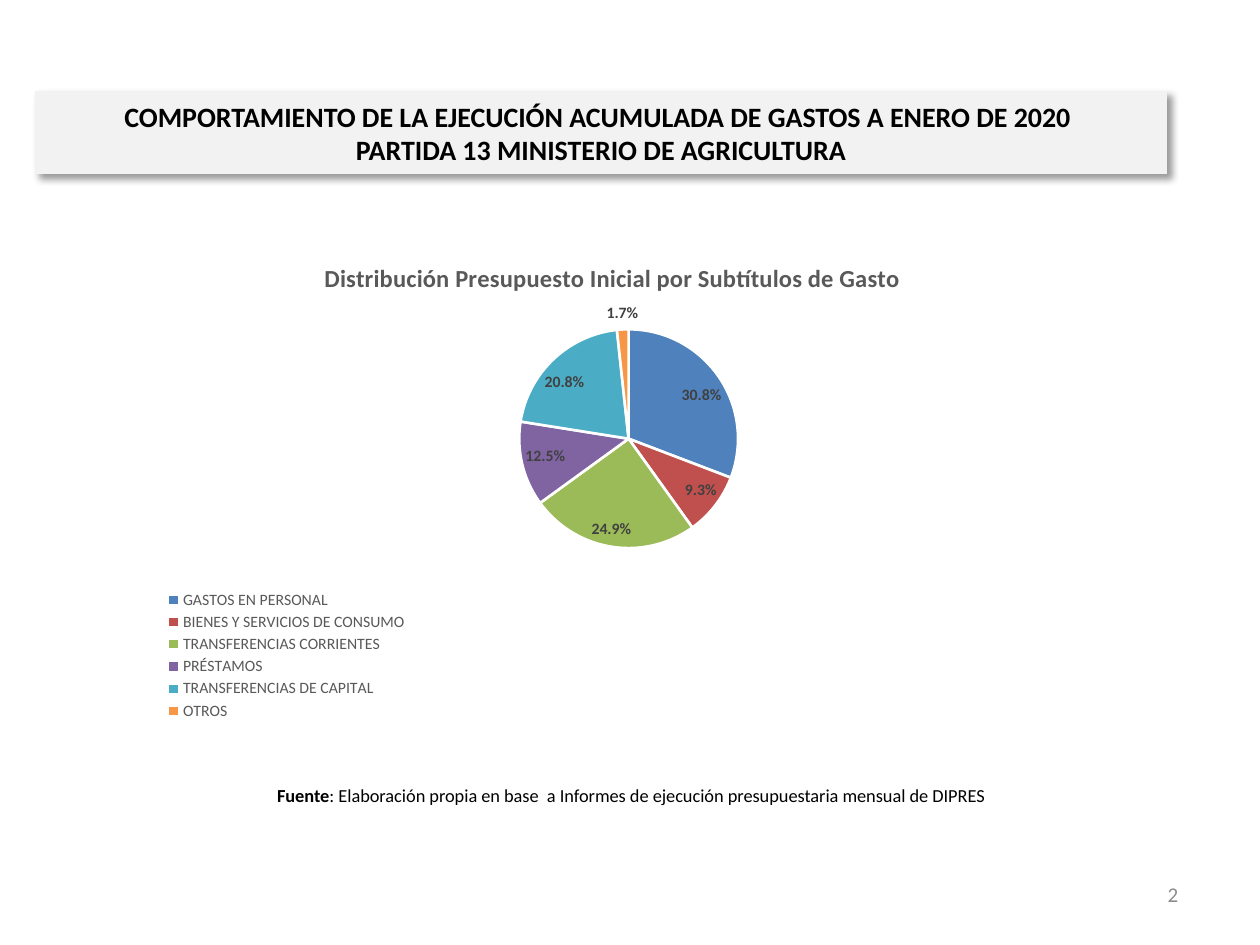
from lxml.etree import SubElement
from pptx import Presentation
from pptx.chart.data import CategoryChartData
from pptx.dml.color import RGBColor
from pptx.enum.chart import XL_CHART_TYPE, XL_LABEL_POSITION, XL_LEGEND_POSITION
from pptx.enum.shapes import MSO_SHAPE
from pptx.enum.text import MSO_ANCHOR, PP_ALIGN
from pptx.oxml import parse_xml
from pptx.oxml.ns import nsdecls, qn
from pptx.util import Inches, Pt

COLORS = {"black": "000000", "white": "FFFFFF", "banner": "F2F2F2", "title": "595959",
          "label": "404040", "number": "8C8C8C"}
SUBTITLES = [
    ("GASTOS EN PERSONAL", 30.8, "4F81BD"),
    ("BIENES Y SERVICIOS DE CONSUMO", 9.3, "C0504D"),
    ("TRANSFERENCIAS CORRIENTES", 24.9, "9BBB59"),
    ("PRÉSTAMOS", 12.5, "8064A2"),
    ("TRANSFERENCIAS DE CAPITAL", 20.8, "4BACC6"),
    ("OTROS", 1.7, "F79646"),
]


def style(font, size, color, bold=False):
    font.name, font.size, font.bold = "Calibri", Pt(size), bold
    font.color.rgb = RGBColor.from_string(COLORS[color])


def place(part, index, **shares):
    """Give a chart part a manual layout, in shares of the chart's size."""
    for old in part.findall(qn("c:layout")):
        part.remove(old)
    layout = parse_xml(f"<c:layout {nsdecls('c')}><c:manualLayout/></c:layout>")
    if part.tag == qn("c:plotArea"):
        SubElement(layout[0], qn("c:layoutTarget"), val="inner")
    for axis in ("x", "y"):
        SubElement(layout[0], qn(f"c:{axis}Mode"), val="edge")
    for name, share in shares.items():
        SubElement(layout[0], qn(f"c:{name}"), val=str(share))
    part.insert(index, layout)


deck = Presentation()
deck.slide_width, deck.slide_height = Inches(10), Inches(7.5)
page = deck.slides.add_slide(deck.slide_layouts[6])

# Heading banner
banner = page.shapes.add_shape(MSO_SHAPE.RECTANGLE, Inches(0.28), Inches(0.73),
                               Inches(8.98), Inches(0.65))
banner.fill.solid()
banner.fill.fore_color.rgb = RGBColor.from_string(COLORS["banner"])
banner.line.color.rgb = RGBColor.from_string(COLORS["banner"])
banner.line.width = Pt(0.75)
banner.shadow.inherit = False
effects = banner._element.spPr.find(qn("a:effectLst"))
effects.append(parse_xml(
    f'<a:outerShdw {nsdecls("a")} blurRad="{Pt(4)}" dist="{Pt(3)}" dir="2700000" algn="tl" '
    f'rotWithShape="0"><a:srgbClr val="{COLORS["black"]}"><a:alpha val="40000"/></a:srgbClr>'
    "</a:outerShdw>"))
banner.text_frame.word_wrap = True
banner.text_frame.vertical_anchor = MSO_ANCHOR.MIDDLE
para = banner.text_frame.paragraphs[0]
para.text = ("COMPORTAMIENTO DE LA EJECUCIÓN ACUMULADA DE GASTOS A ENERO DE 2020 \v"
             "PARTIDA 13 MINISTERIO DE AGRICULTURA")
para.alignment = PP_ALIGN.CENTER
for span in para.runs:
    style(span.font, 16, "black", True)

# Budget pie
data = CategoryChartData()
data.categories = [name for name, share, color in SUBTITLES]
data.add_series("Series 1", [share for name, share, color in SUBTITLES])
chart = page.shapes.add_chart(XL_CHART_TYPE.PIE, Inches(0.42), Inches(1.83),
                              Inches(8.83), Inches(4.04), data).chart
style(chart.font, 10, "black")
chart.has_title = True
heading = chart.chart_title
heading.text_frame.text = "Distribución Presupuesto Inicial por Subtítulos de Gasto"
style(heading.text_frame.paragraphs[0].runs[0].font, 14, "title", True)
heading.include_in_layout = False
place(heading._element, 1, x=0.24, y=0.05)

chart.has_legend = True
chart.legend.position = XL_LEGEND_POSITION.LEFT
chart.legend.include_in_layout = False
style(chart.legend.font, 9, "title")
place(chart.legend._element, 1, x=0.06, y=0.7, w=0.3, h=0.27)

plot = chart.plots[0]
plot.vary_by_categories = True
place(plot._element.getparent(), 0, x=0.035, y=0.194, w=0.965, h=0.43)
for index, (name, share, color) in enumerate(SUBTITLES):
    piece = plot.series[0].points[index].format
    piece.fill.solid()
    piece.fill.fore_color.rgb = RGBColor.from_string(color)
    piece.line.color.rgb = RGBColor.from_string(COLORS["white"])
    piece.line.width = Pt(1.5)
plot.has_data_labels = True
labels = plot.data_labels
labels.show_value, labels.show_percentage = False, True
labels.number_format, labels.number_format_is_linked = "0.0%", False
labels.position = XL_LABEL_POSITION.BEST_FIT
style(labels.font, 9, "label", True)

# Source line and page number
for left, top, width, align, size, color, spans in [
    (0.77, 6.11, 8.48, PP_ALIGN.CENTER, 10.5, "black", [
        ("Fuente", True),
        (": Elaboración propia en base  a Informes de ejecución presupuestaria mensual de DIPRES",
         False)]),
    (7.12, 6.9, 2.33, PP_ALIGN.RIGHT, 12, "number", [("2", False)]),
]:
    box = page.shapes.add_textbox(Inches(left), Inches(top), Inches(width), Inches(0.4))
    box.text_frame.word_wrap = True
    box.text_frame.vertical_anchor = MSO_ANCHOR.MIDDLE
    para = box.text_frame.paragraphs[0]
    para.alignment = align
    for words, bold in spans:
        span = para.add_run()
        span.text = words
        style(span.font, size, color, bold)

deck.save("out.pptx")
